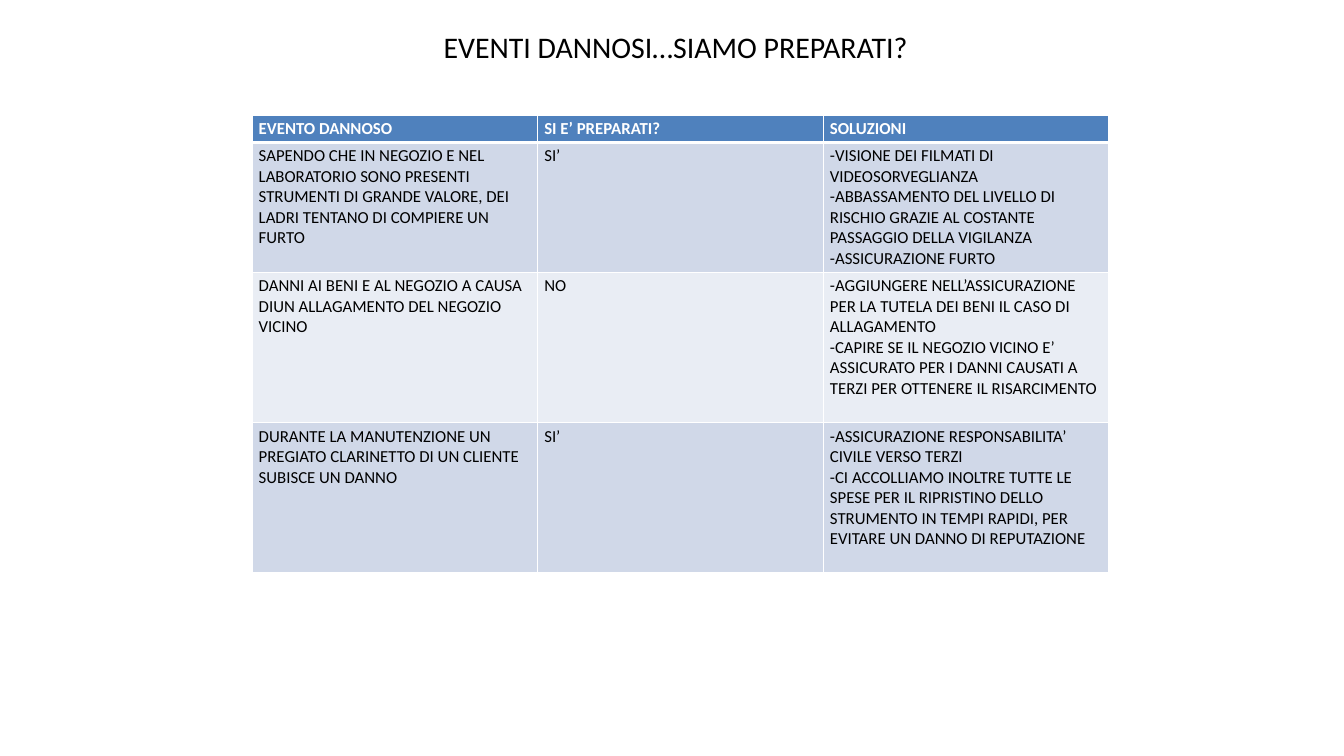
from lxml.etree import SubElement
from pptx import Presentation
from pptx.dml.color import RGBColor
from pptx.enum.text import MSO_ANCHOR, MSO_AUTO_SIZE, PP_ALIGN
from pptx.oxml.ns import qn
from pptx.util import Inches, Pt

TITLE = "EVENTI DANNOSI…SIAMO PREPARATI?"
HEADINGS = ["EVENTO DANNOSO", "SI E’ PREPARATI?", "SOLUZIONI"]
EVENTS = [
    [
        "SAPENDO CHE IN NEGOZIO E NEL LABORATORIO SONO PRESENTI STRUMENTI "
        "DI GRANDE VALORE, DEI LADRI TENTANO DI COMPIERE UN FURTO",
        "SI’",
        "-VISIONE DEI FILMATI DI VIDEOSORVEGLIANZA\n"
        "-ABBASSAMENTO DEL LIVELLO DI RISCHIO GRAZIE AL COSTANTE "
        "PASSAGGIO DELLA VIGILANZA\n"
        "-ASSICURAZIONE FURTO",
    ],
    [
        "DANNI AI BENI E AL NEGOZIO A CAUSA DIUN ALLAGAMENTO DEL NEGOZIO VICINO",
        "NO",
        "-AGGIUNGERE NELL’ASSICURAZIONE PER LA TUTELA DEI BENI IL CASO DI "
        "ALLAGAMENTO\n"
        "-CAPIRE SE IL NEGOZIO VICINO E’ ASSICURATO PER I DANNI CAUSATI A "
        "TERZI PER OTTENERE IL RISARCIMENTO",
    ],
    [
        "DURANTE LA MANUTENZIONE UN PREGIATO CLARINETTO DI UN CLIENTE SUBISCE UN DANNO",
        "SI’",
        "-ASSICURAZIONE RESPONSABILITA’ CIVILE VERSO TERZI\n"
        "-CI ACCOLLIAMO INOLTRE TUTTE LE SPESE PER IL RIPRISTINO DELLO "
        "STRUMENTO IN TEMPI RAPIDI, PER EVITARE UN DANNO DI REPUTAZIONE",
    ],
]
ROW_HEIGHTS = [0.41, 1.93, 2.24, 2.23]
COLUMN_WIDTH = 4.25
HEADER_FILL = "4F81BD"
BAND_FILLS = ["D0D8E8", "E9EDF4"]
WHITE = "FFFFFF"
BLACK = "000000"


def color(value):
    """Return the colour for a hex string."""
    return RGBColor.from_string(value)


def write_text(text_frame, text, size=18, hex_color=BLACK, bold=False):
    """Write one left-aligned paragraph for each line of text."""
    text_frame.text = text
    for paragraph in text_frame.paragraphs:
        paragraph.alignment = PP_ALIGN.LEFT
        for run in paragraph.runs:
            run.font.name = "Calibri"
            run.font.size = Pt(size)
            run.font.bold = bold
            run.font.color.rgb = color(hex_color)


def set_borders(cell, **widths):
    """Draw white cell borders with the given widths in points."""
    properties = cell._tc.get_or_add_tcPr()
    for side in "LRTB":
        width = Pt(widths.get(side, 1))
        line = SubElement(properties, qn(f"a:ln{side}"), w=str(width))
        fill = SubElement(line, qn("a:solidFill"))
        SubElement(fill, qn("a:srgbClr"), val=WHITE)


def add_title(slide):
    """Place and format the slide title."""
    title = slide.shapes.title
    title.left, title.top = Inches(6.5), Inches(0.38)
    title.width, title.height = Inches(8.67), Inches(0.64)
    text_frame = title.text_frame
    text_frame.word_wrap = True
    text_frame.auto_size = MSO_AUTO_SIZE.NONE
    text_frame.vertical_anchor = MSO_ANCHOR.TOP
    write_text(text_frame, TITLE, size=32)


def add_events_table(slide):
    """Add the table of harmful events, readiness and solutions."""
    rows = [HEADINGS] + EVENTS
    table = slide.shapes.add_table(
        len(rows), len(HEADINGS), Inches(3.75), Inches(1.71),
        Inches(COLUMN_WIDTH * len(HEADINGS)), Inches(sum(ROW_HEIGHTS)),
    ).table
    for column in table.columns:
        column.width = Inches(COLUMN_WIDTH)
    for row_index, texts in enumerate(rows):
        header = row_index == 0
        table.rows[row_index].height = Inches(ROW_HEIGHTS[row_index])
        for column_index, text in enumerate(texts):
            cell = table.cell(row_index, column_index)
            set_borders(cell, B=3 if header else 1, T=3 if row_index == 1 else 1)
            cell.fill.solid()
            fill = HEADER_FILL if header else BAND_FILLS[(row_index - 1) % 2]
            cell.fill.fore_color.rgb = color(fill)
            write_text(cell.text_frame, text, bold=header,
                       hex_color=WHITE if header else BLACK)


def main():
    """Build and save the presentation."""
    presentation = Presentation()
    presentation.slide_width = Inches(20)
    presentation.slide_height = Inches(11.25)
    slide = presentation.slides.add_slide(presentation.slide_layouts[5])
    add_events_table(slide)
    add_title(slide)
    presentation.save("out.pptx")


if __name__ == "__main__":
    main()
